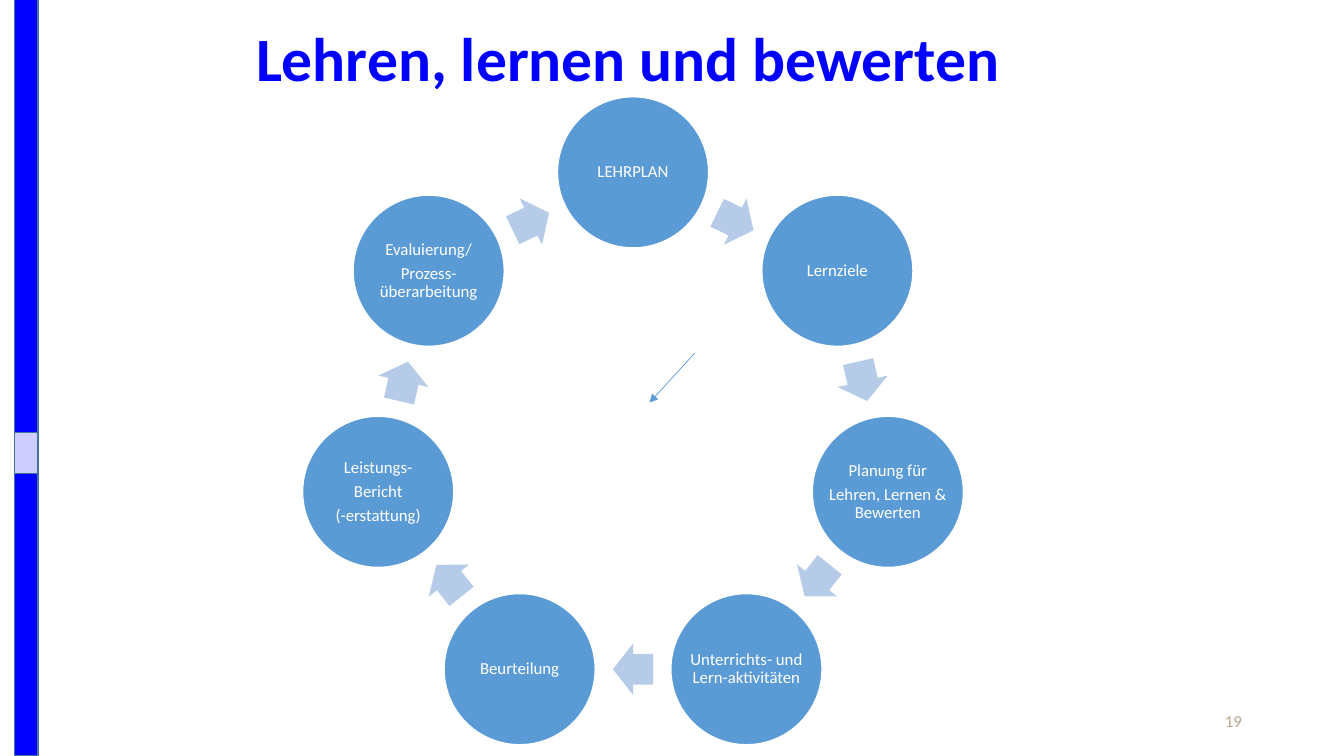
from math import cos, pi, sin

from lxml.etree import SubElement
from pptx import Presentation
from pptx.dml.color import RGBColor
from pptx.enum.shapes import MSO_CONNECTOR as Connector, MSO_SHAPE as Shape
from pptx.enum.text import MSO_ANCHOR as Anchor, PP_ALIGN as Align
from pptx.oxml.ns import qn
from pptx.util import Pt

TITLE = "Lehren, lernen und bewerten"
PAGE_NUMBER = "19"
STAGES = [
    ["LEHRPLAN"],
    ["Lernziele"],
    ["Planung für", "Lehren, Lernen & Bewerten"],
    ["Unterrichts- und Lern-aktivitäten"],
    ["Beurteilung"],
    ["Leistungs-", "Bericht", "(-erstattung)"],
    ["Evaluierung/", "Prozess-überarbeitung"],
]
THEME = {
    "font": "Calibri", "title_size": 44, "body_size": 12,
    "title": "0000FF", "page": "B5A788", "stage": "5B9BD5", "stage_text": "FFFFFF",
    "arrow": "B5CBE7", "bar": "0000FF", "marker": "CCCCFF", "bar_line": "43739E",
}
SLIDE_SIZE = (960, 540)
CENTER_X, CENTER_Y, RADIUS = 452.2, 309.8, 186.7
STAGE_SIZE = 108
ARROW_W, ARROW_H = 28.8, 36.7
BAR_X, BAR_W = 10.3, 16.9


def color(role):
    return RGBColor.from_string(THEME[role])


def add_filled(slide, kind, box, fill, line=None):
    figure = slide.shapes.add_shape(kind, *map(Pt, box))
    figure.shadow.inherit = False
    figure.fill.solid()
    figure.fill.fore_color.rgb = color(fill)
    if line:
        figure.line.color.rgb = color(line)
        figure.line.width = Pt(1)
    else:
        figure.line.fill.background()
    return figure


def add_label(slide, box, lines, role, size, align=Align.CENTER, anchor=Anchor.MIDDLE,
              bold=False, inset=None, spacing=None, after=0):
    frame = slide.shapes.add_textbox(*map(Pt, box)).text_frame
    frame.word_wrap = True
    frame.vertical_anchor = anchor
    if inset is not None:
        frame.margin_left = frame.margin_right = Pt(inset)
        frame.margin_top = frame.margin_bottom = Pt(inset)
    frame.text = "\n".join(lines)
    for paragraph in frame.paragraphs:
        paragraph.alignment = align
        paragraph.line_spacing = spacing
        paragraph.space_after = Pt(after)
        for run in paragraph.runs:
            run.font.name = THEME["font"]
            run.font.size = Pt(THEME[size])
            run.font.bold = bold
            run.font.color.rgb = color(role)


def ring_point(step, radius):
    angle = 2 * pi * step / len(STAGES)
    return CENTER_X + radius * sin(angle), CENTER_Y - radius * cos(angle)


def centered_box(center, width, height):
    return center[0] - width / 2, center[1] - height / 2, width, height


def add_cycle(slide):
    arrow_radius = RADIUS * cos(pi / len(STAGES))
    for step, lines in enumerate(STAGES):
        box = centered_box(ring_point(step, RADIUS), STAGE_SIZE, STAGE_SIZE)
        add_filled(slide, Shape.OVAL, box, "stage", "stage_text")
        add_label(slide, box, lines, "stage_text", "body_size",
                  inset=1.2, spacing=0.9, after=4.2)
        box = centered_box(ring_point(step + 0.5, arrow_radius), ARROW_W, ARROW_H)
        arrow = add_filled(slide, Shape.RIGHT_ARROW, box, "arrow")
        arrow.adjustments[0] = 0.6
        arrow.adjustments[1] = 0.5
        arrow.rotation = 360 * (step + 0.5) / len(STAGES)


def add_pointer(slide):
    pointer = slide.shapes.add_connector(
        Connector.STRAIGHT, *map(Pt, (496.1, 252.4, 464, 287.6)))
    pointer.line.color.rgb = color("stage")
    pointer.line.width = Pt(0.5)
    SubElement(pointer.line._get_or_add_ln(), qn("a:tailEnd"), type="triangle")
    SubElement(pointer._element.spPr, qn("a:effectLst"))


def main():
    deck = Presentation()
    deck.slide_width, deck.slide_height = map(Pt, SLIDE_SIZE)
    slide = deck.slides.add_slide(deck.slide_layouts[6])
    add_label(slide, (678.2, 500.4, 216, 28.8), [PAGE_NUMBER], "page", "body_size",
              align=Align.RIGHT)
    add_cycle(slide)
    add_label(slide, (51.8, 16.6, 794.2, 104.4), [TITLE], "title", "title_size",
              anchor=Anchor.TOP, bold=True, spacing=0.9)
    add_filled(slide, Shape.RECTANGLE, (BAR_X, -0.5, BAR_W, 540), "bar", "bar_line")
    add_filled(slide, Shape.RECTANGLE, (BAR_X, 308.9, BAR_W, 29.5), "marker", "bar_line")
    add_pointer(slide)
    deck.save("out.pptx")


if __name__ == "__main__":
    main()
